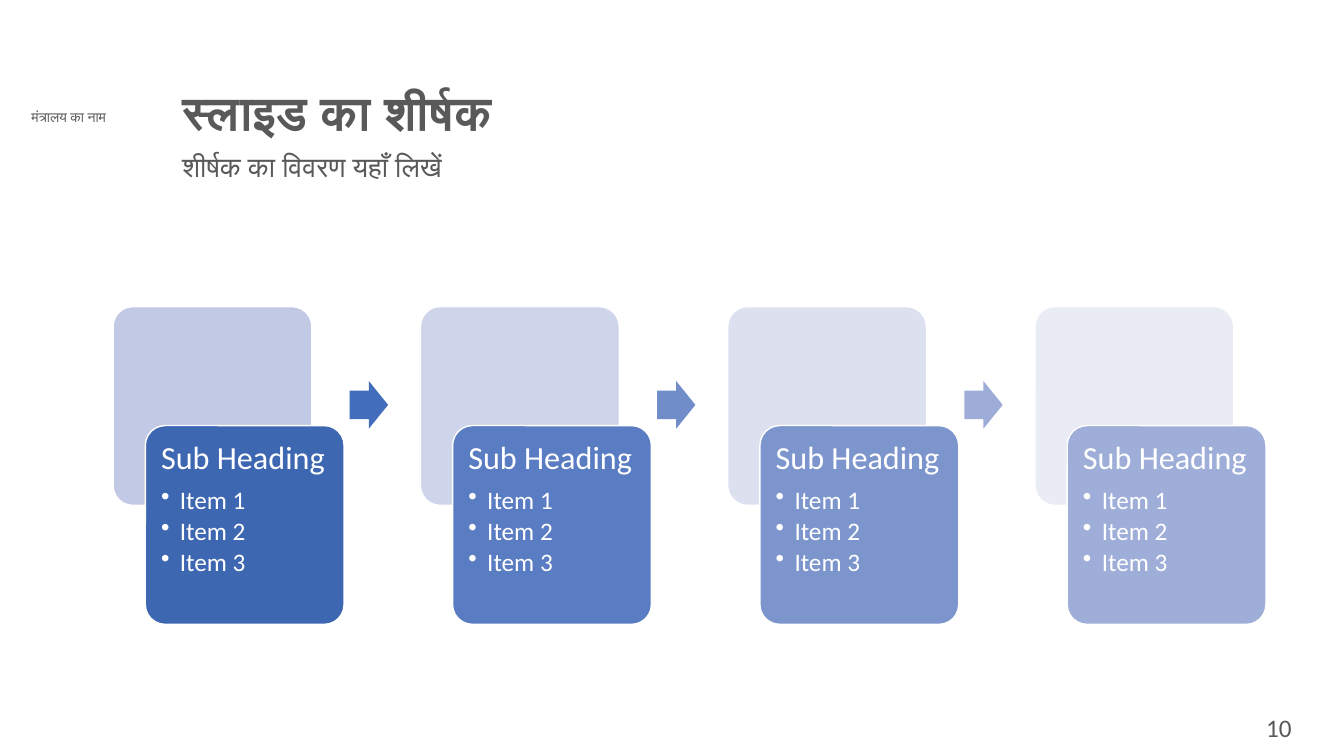
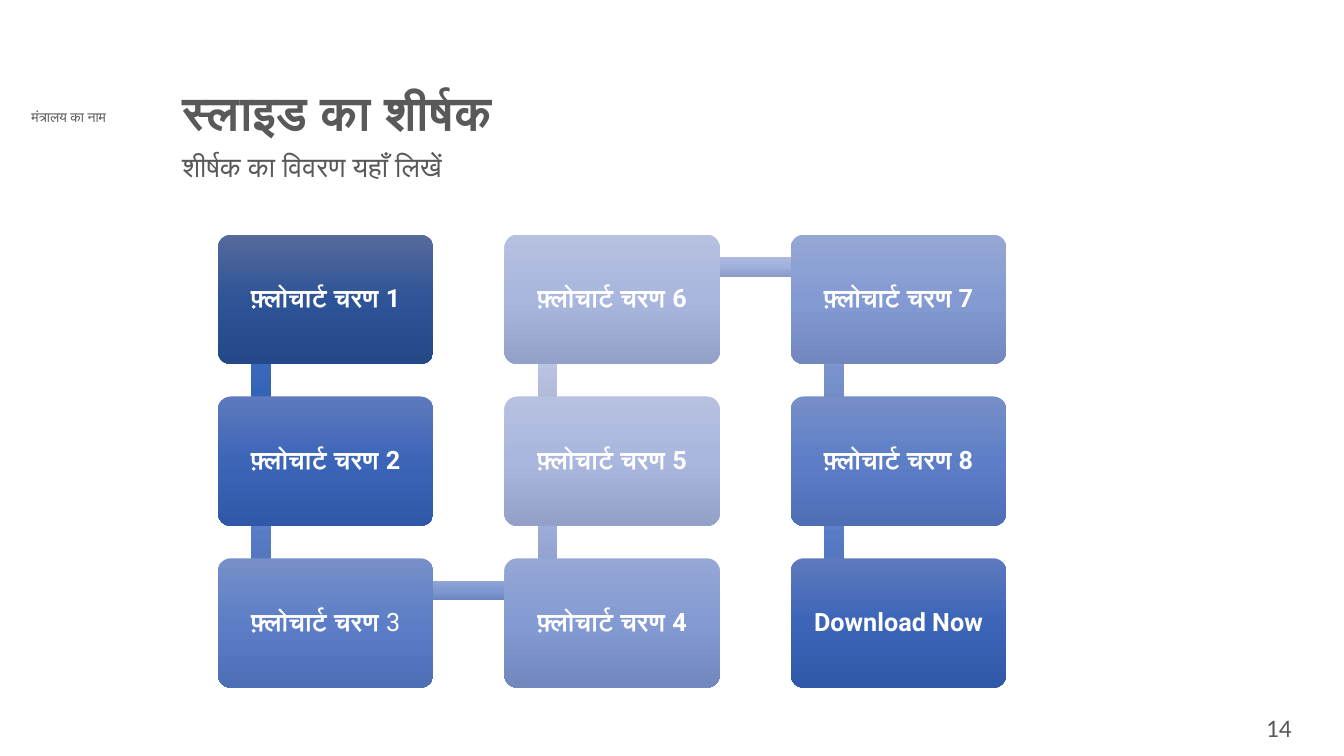
"""Build two slides, a four-stage process and a winding flowchart, under one shared heading."""
import copy

import pptx
import pptx.dml.color
import pptx.enum.shapes
import pptx.enum.text
import pptx.oxml
import pptx.oxml.ns
import pptx.util

Pt = pptx.util.Pt
Kind = pptx.enum.shapes.MSO_SHAPE
Align = pptx.enum.text.PP_ALIGN
Anchor = pptx.enum.text.MSO_ANCHOR
qn = pptx.oxml.ns.qn


class Theme:
    font = "Calibri"
    step_font = "Roboto"
    grey = "595959"
    white = "FFFFFF"
    small, body, lead, head, title = 10, 18, 20, 23, 34
    backs = ("C1C9E4", "CED4E9", "DCE0EF", "E9EBF5")
    fronts = ("3E67B2", "5A7CC3", "7D95CD", "9FAED8")
    arrows = ("416DBB", "708CC9", "9EADD8")
    steps = (
        ("566B9E", "2E5396", "244989"),
        ("5E79BD", "3C65B8", "3058A9"),
        ("778FC9", "5D7EC7", "4E6EB6"),
        ("95A7D4", "849AD2", "7187BE"),
        ("B6C1E0", "A9B6DD", "93A0C8"),
    )
    bars = (
        ("5E7EC4", "3B6BC1", "2F5EB1"),
        ("7691CC", "5C81CA", "4C70B9"),
        ("91A5D5", "7E98D2", "6C85BF"),
        ("AEBBDE", "9FB0DC", "8A9BC7"),
        ("CAD2E9", "BFC9E6", "A7B1CF"),
    )


def write(para, text, size, hue, bold=False, font=Theme.font):
    run = para.add_run()
    run.text = text
    run.font.size = Pt(size)
    run.font.name = font
    run.font.bold = bold
    run.font.color.rgb = pptx.dml.color.RGBColor.from_string(hue)


def draw(slide, kind, left, top, width, height, hues, edge=None):
    shape = slide.shapes.add_shape(kind, Pt(left), Pt(top), Pt(width), Pt(height))
    shape.shadow.inherit = False
    if len(hues) == 1:
        shape.fill.solid()
        shape.fill.fore_color.rgb = pptx.dml.color.RGBColor.from_string(hues[0])
    else:
        shape.fill.gradient()
        shape.fill.gradient_angle = 270
        stops = shape._element.spPr.find(".//" + qn("a:gsLst"))
        stops.append(copy.deepcopy(stops[0]))
        for index, stop in enumerate(shape.fill.gradient_stops):
            stop.position = index / 2
            stop.color.rgb = pptx.dml.color.RGBColor.from_string(hues[index])
    if edge:
        shape.line.color.rgb = pptx.dml.color.RGBColor.from_string(edge)
        shape.line.width = Pt(1)
    else:
        shape.line.fill.background()
    if kind == Kind.ROUNDED_RECTANGLE:
        shape.adjustments[0] = 0.1
    return shape


deck = pptx.Presentation()
deck.slide_width = Pt(960)
deck.slide_height = Pt(540)

slides = []
for number in ("10", "14"):
    slide = deck.slides.add_slide(deck.slide_layouts[6])
    slides.append(slide)
    for text, left, top, width, height, size, bold, align, space in (
        ("मंत्रालय का नाम", 2, 74, 94, 19.4, Theme.small, False, Align.CENTER, 1),
        ("स्लाइड का शीर्षक", 123, 60.5, 692, 39.6, Theme.title, True, Align.LEFT, 0.9),
        ("शीर्षक का विवरण यहाँ लिखें", 123, 106, 692, 45.4, Theme.lead, False, Align.LEFT, 0.9),
        (number, 871, 505.5, 85, 32.4, Theme.body, False, Align.CENTER, 1),
    ):
        box = slide.shapes.add_textbox(Pt(left), Pt(top), Pt(width), Pt(height))
        box.text_frame.word_wrap = True
        para = box.text_frame.paragraphs[0]
        para.alignment = align
        para.line_spacing = space
        write(para, text, size, Theme.grey, bold)

stages, chart = slides

pitch, side = 219.5, 142
for index, (back, front) in enumerate(zip(Theme.backs, Theme.fronts)):
    left, top = 80.8 + index * pitch, 219
    draw(stages, Kind.ROUNDED_RECTANGLE, left, top, side, side, [back], Theme.white)
    card = draw(stages, Kind.ROUNDED_RECTANGLE, left + 23, top + 85, side, side, [front], Theme.white)
    frame = card.text_frame
    frame.word_wrap = True
    frame.vertical_anchor = Anchor.TOP
    frame.margin_left = frame.margin_right = frame.margin_top = frame.margin_bottom = Pt(7.2)
    for row, text in enumerate(("Sub Heading", "Item 1", "Item 2", "Item 3")):
        para = frame.add_paragraph() if row else frame.paragraphs[0]
        para.alignment = Align.LEFT
        para.line_spacing = 0.9
        para.space_after = Pt(2.7 if row else 8)
        if row:
            para.level = 1
            props = para._p.get_or_add_pPr()
            props.set("marL", str(Pt(13.5)))
            props.set("indent", str(-Pt(13.5)))
            mark = pptx.oxml.parse_xml(
                '<a:buChar xmlns:a="http://schemas.openxmlformats.org/drawingml/2006/main" char="•"/>')
            props.append(mark)
        write(para, text, Theme.body if row else Theme.head, Theme.white)
    if index < len(Theme.arrows):
        arrow = draw(stages, Kind.RIGHT_ARROW, left + 169, top + 53.2, 27.4, 34, [Theme.arrows[index]])
        arrow.adjustments[0] = 0.6

across, down, width, height = 204.6, 115.6, 154, 92.4
thick = 14
label = "फ़्लोचार्ट चरण "
steps = [[(label + str(count), True)] for count in range(1, 9)] + [[("Download Now", True)]]
steps[2] = [(label, True), ("3", False)]
last = len(steps) - 1
for index, runs in enumerate(steps):
    col, row = divmod(index, 3)
    turn = row == 2
    rise = col % 2 == 1
    if rise:
        row = 2 - row
    left, top = 155.6 + col * across, 167.6 + row * down
    if index < last:
        bar = Theme.bars[min(index, last - index)]
        mid, high = left + 31, top + 23
        if turn:
            draw(chart, Kind.RECTANGLE, mid, high - thick / 2, across, thick, bar)
        else:
            start = high - down if rise else high
            draw(chart, Kind.RECTANGLE, mid - thick / 2, start, thick, down, bar)
    hues = Theme.steps[min(index, last + 1 - index)]
    step = draw(chart, Kind.ROUNDED_RECTANGLE, left, top, width, height, hues)
    frame = step.text_frame
    frame.word_wrap = True
    frame.vertical_anchor = Anchor.MIDDLE
    frame.margin_left = frame.margin_right = frame.margin_top = frame.margin_bottom = Pt(5)
    para = frame.paragraphs[0]
    para.alignment = Align.CENTER
    para.line_spacing = 0.9
    para.space_after = Pt(6.3)
    for text, bold in runs:
        write(para, text, Theme.body, Theme.white, bold, Theme.step_font)

deck.save("out.pptx")
